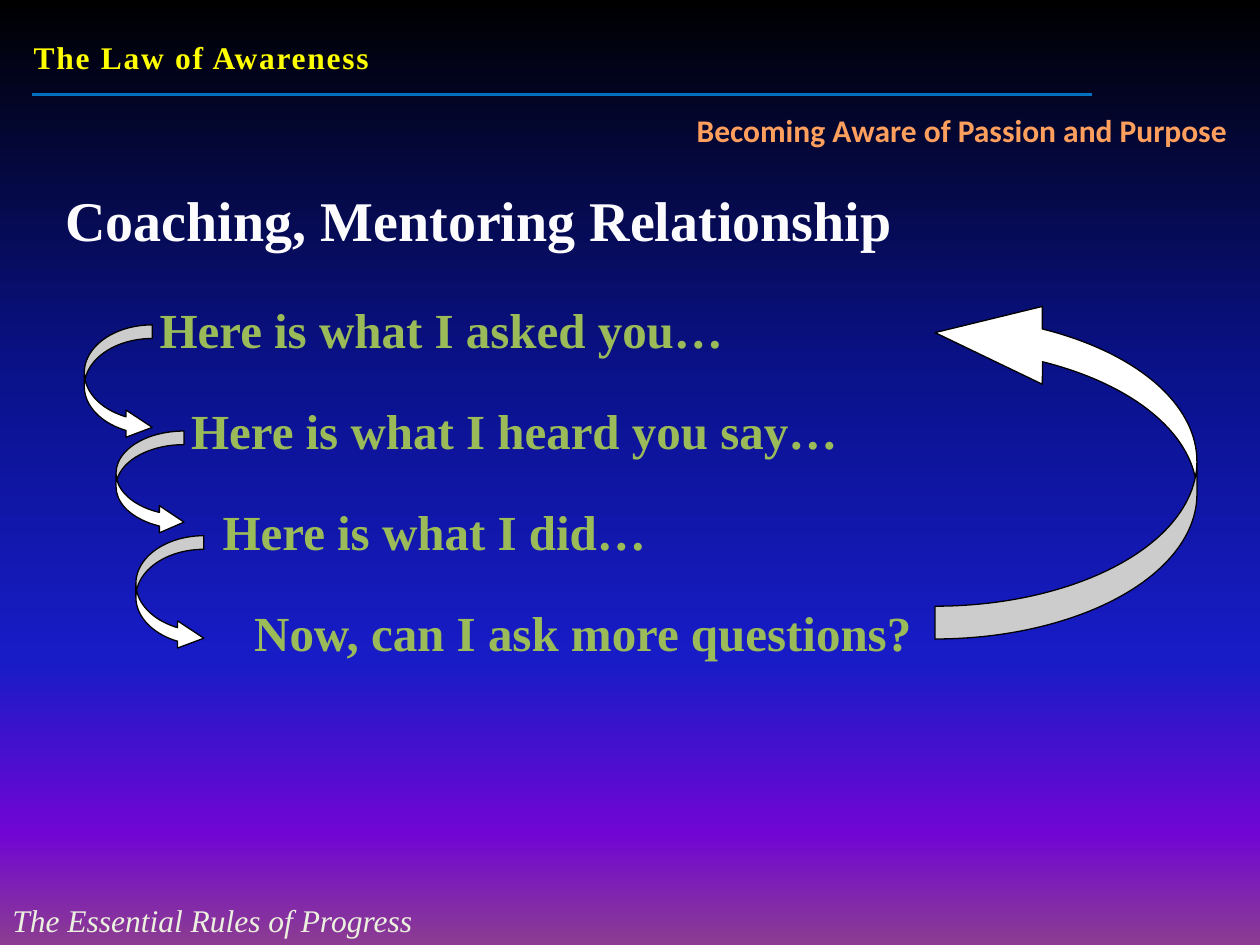
from dataclasses import dataclass

from lxml import etree
from pptx import Presentation
from pptx.dml.color import RGBColor
from pptx.dml.fill import FillFormat
from pptx.enum.shapes import MSO_CONNECTOR, MSO_SHAPE
from pptx.enum.text import MSO_AUTO_SIZE, PP_ALIGN
from pptx.oxml.ns import qn
from pptx.slide import Slide
from pptx.util import Cm, Pt

LEFT, RIGHT = PP_ALIGN.LEFT, PP_ALIGN.RIGHT
GROW = MSO_AUTO_SIZE.SHAPE_TO_FIT_TEXT
STRAIGHT = MSO_CONNECTOR.STRAIGHT
CURVED_RIGHT, CURVED_UP = MSO_SHAPE.CURVED_RIGHT_ARROW, MSO_SHAPE.CURVED_UP_ARROW

Stops = tuple[tuple[int, str], ...]
Box = tuple[float, float, float, float]


@dataclass(frozen=True)
class Theme:
    serif: str = "Times New Roman"
    sans: str = "Calibri"
    small: int = 18
    step: int = 28
    title: int = 32
    yellow: str = "FFFF00"
    white: str = "FFFFFF"
    title_white: str = "FCFCFF"
    green: str = "9BBB59"
    pale_green: str = "EBF1DE"
    blue: str = "0070C0"
    black: str = "000000"
    background: Stops = ((0, "000000"), (40, "0A128C"), (70, "181CC7"),
                         (88, "7005D4"), (100, "8C3D91"))
    orange: Stops = ((0, "FFA367"), (25, "FF9F5D"), (50, "F38E3A"),
                     (75, "FF9F5D"), (100, "FFA367"))


THEME = Theme()


@dataclass(frozen=True)
class Label:
    """A text box; box is left, top, width, height in centimetres."""
    box: Box
    lines: tuple[str, ...]
    size: int
    color: str | Stops
    font: str = THEME.serif
    bold: bool = True
    italic: bool = False
    align: PP_ALIGN = LEFT
    tracking: int = 0
    space_after: int = 0
    first_indent: float = 0
    indent_step: float = 0


@dataclass(frozen=True)
class Arrow:
    box: Box
    adjustments: tuple[float, float, float]
    shape_type: MSO_SHAPE = CURVED_RIGHT
    rotation: int = 0


LABELS = (
    Label((1.7, 5.92, 22.66, 9.65),
          ("Here is what I asked you…", "Here is what I heard you say…",
           "Here is what I did…", "Now, can I ask more questions?"),
          THEME.step, THEME.green, space_after=24,
          first_indent=1.27, indent_step=0.635),
    Label((0.43, 0.64, 24.56, 1.02), ("The Law of Awareness",),
          THEME.small, THEME.yellow, tracking=100),
    Label((1.07, 3.61, 23.7, 1.63), ("Coaching, Mentoring Relationship",),
          THEME.title, THEME.title_white),
    Label((13.13, 2.11, 11.86, 1.8), ("Becoming Aware of Passion and Purpose",),
          THEME.small, THEME.orange, font=THEME.sans, align=RIGHT),
    Label((0, 18.03, 11.63, 1.02), ("The Essential Rules of Progress",),
          THEME.small, THEME.pale_green, bold=False, italic=True),
)

ARROWS = (
    Arrow((1.7, 6.55, 1.37, 2.34), (0.2, 0.4, 0.386)),
    Arrow((2.34, 8.69, 1.37, 2.11), (0.2, 0.4, 0.362)),
    Arrow((2.74, 10.8, 1.37, 2.34), (0.2, 0.4, 0.386)),
    Arrow((18.01, 6.76, 6.96, 5.28), (0.125, 0.297, 0.41), CURVED_UP, 270),
)


def set_gradient(fill: FillFormat, parent: etree.ElementBase, stops: Stops) -> None:
    """Give the fill inside parent a gradient from top to bottom."""
    fill.gradient()
    fill.gradient_angle = 270
    stop_list = parent.find(".//" + qn("a:gsLst"))
    for stop in list(stop_list):
        stop_list.remove(stop)
    for position, color in stops:
        stop = etree.SubElement(stop_list, qn("a:gs"), pos=str(position * 1000))
        etree.SubElement(stop, qn("a:srgbClr"), val=color)


def add_label(slide: Slide, label: Label) -> None:
    text_box = slide.shapes.add_textbox(*map(Cm, label.box))
    frame = text_box.text_frame
    frame.word_wrap = True
    frame.auto_size = GROW
    for index, line in enumerate(label.lines):
        paragraph = frame.add_paragraph() if index else frame.paragraphs[0]
        paragraph.alignment = label.align
        paragraph.space_after = Pt(label.space_after)
        indent = Cm(label.first_indent + index * label.indent_step)
        paragraph._p.get_or_add_pPr().set("marL", str(indent))

        run = paragraph.add_run()
        run.text = line
        font = run.font
        font.name, font.size = label.font, Pt(label.size)
        font.bold, font.italic = label.bold, label.italic
        properties = run._r.get_or_add_rPr()
        if label.tracking:
            properties.set("spc", str(label.tracking))
        if isinstance(label.color, str):
            font.color.rgb = RGBColor.from_string(label.color)
        else:
            set_gradient(font.fill, properties, label.color)


def add_rule(slide: Slide) -> None:
    rule = slide.shapes.add_connector(STRAIGHT, Cm(0.64), Cm(1.9), Cm(22.02), Cm(1.9))
    rule.line.color.rgb = RGBColor.from_string(THEME.blue)
    rule.line.width = Pt(1.5)
    etree.SubElement(rule._element.spPr, qn("a:effectLst"))


def add_arrow(slide: Slide, arrow: Arrow) -> None:
    shape = slide.shapes.add_shape(arrow.shape_type, *map(Cm, arrow.box))
    shape.rotation = arrow.rotation
    for index, value in enumerate(arrow.adjustments):
        shape.adjustments[index] = value
    shape.shadow.inherit = False
    shape.fill.solid()
    shape.fill.fore_color.rgb = RGBColor.from_string(THEME.white)
    shape.line.color.rgb = RGBColor.from_string(THEME.black)
    shape.line.width = Pt(0.75)


def main() -> None:
    presentation = Presentation()
    presentation.slide_width, presentation.slide_height = Cm(25.4), Cm(19.05)
    slide = presentation.slides.add_slide(presentation.slide_layouts[6])

    # Background
    set_gradient(slide.background.fill, slide.element, THEME.background)

    # Texts and the rule under the header
    for label in LABELS:
        add_label(slide, label)
    add_rule(slide)

    # Arrows from step to step, and the one back to the start
    for arrow in ARROWS:
        add_arrow(slide, arrow)

    presentation.save("out.pptx")


if __name__ == "__main__":
    main()
